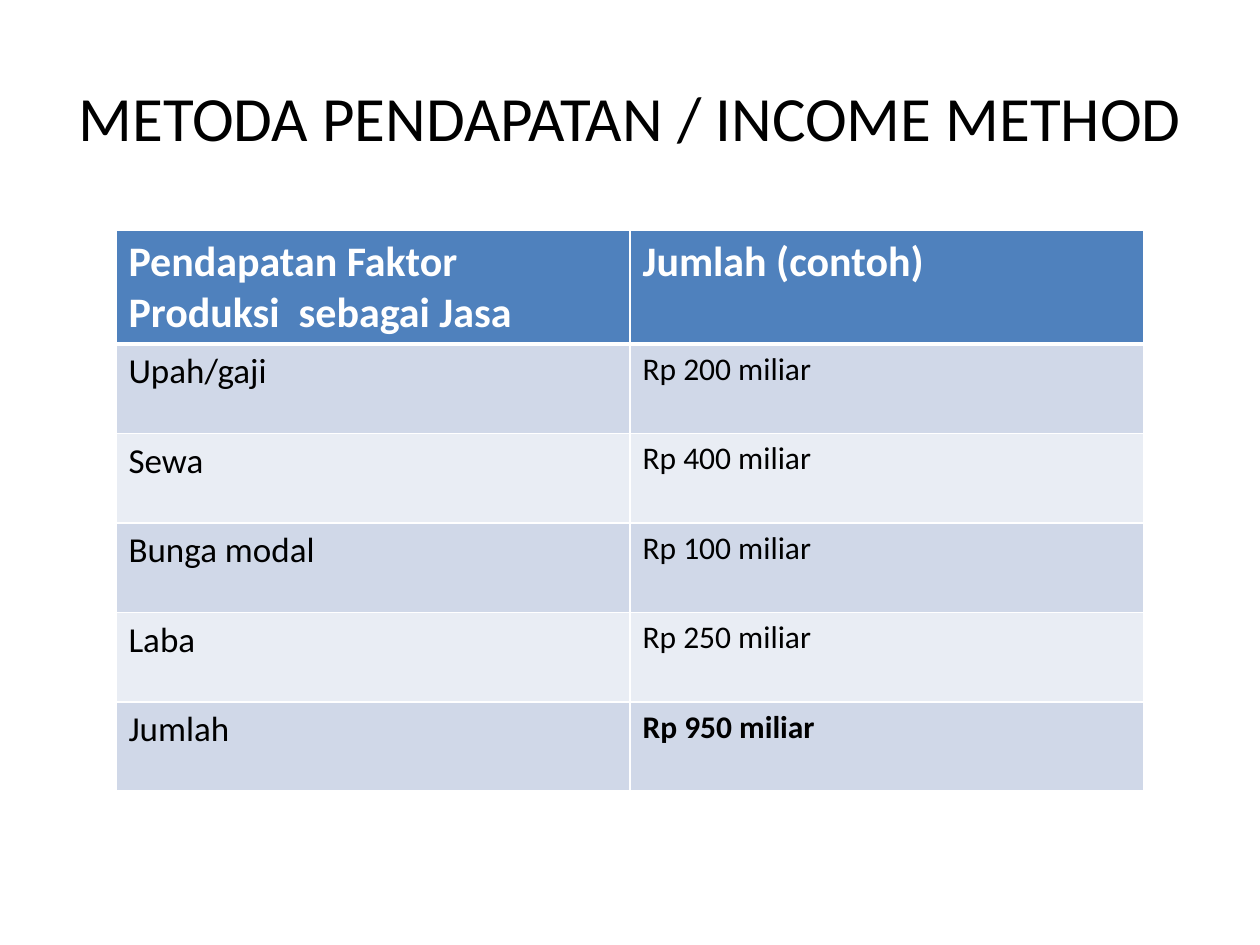
import pptx
import pptx.util
import pptx.dml.color
import pptx.enum.text
import pptx.oxml.ns
import lxml.etree

TITLE = "METODA PENDAPATAN / INCOME METHOD"
HEADER = ("Pendapatan Faktor Produksi  sebagai Jasa", "Jumlah (contoh)")
INCOMES = [
    ("Upah/gaji", "Rp 200 miliar"),
    ("Sewa", "Rp 400 miliar"),
    ("Bunga modal", "Rp 100 miliar"),
    ("Laba", "Rp 250 miliar"),
    ("Jumlah", "Rp 950 miliar"),
]
COLORS = {"text": "000000", "white": "FFFFFF", "header": "4F81BD",
          "odd": "D0D8E8", "even": "E9EDF4"}
FONT = "Calibri"
COL_W, HEADER_H, ROW_H = 4.08, 0.9, 0.71
Inches, Pt = pptx.util.Inches, pptx.util.Pt


def rgb(name):
    return pptx.dml.color.RGBColor.from_string(COLORS[name])


def add_run(p, text, size, color, bold=False):
    r = p.add_run()
    r.text = text
    r.font.name, r.font.size, r.font.bold = FONT, Pt(size), bold
    r.font.color.rgb = rgb(color)


def set_borders(cell, widths):
    qn = pptx.oxml.ns.qn
    tcPr = cell._tc.get_or_add_tcPr()
    for side, width in widths.items():
        ln = lxml.etree.SubElement(tcPr, qn("a:ln" + side), w=str(Pt(width)))
        fill = lxml.etree.SubElement(ln, qn("a:solidFill"))
        lxml.etree.SubElement(fill, qn("a:srgbClr"), val=COLORS["white"])


def add_title(slide):
    sp = slide.shapes.add_textbox(Inches(0.5), Inches(0.3), Inches(9), Inches(1.25))
    tf = sp.text_frame
    tf.word_wrap = True
    tf.margin_left = tf.margin_right = 0
    tf.vertical_anchor = pptx.enum.text.MSO_ANCHOR.MIDDLE
    p = tf.paragraphs[0]
    p.alignment = pptx.enum.text.PP_ALIGN.CENTER
    add_run(p, TITLE, 36, "text")


def add_income_table(slide):
    rows = [HEADER] + INCOMES
    height = HEADER_H + ROW_H * len(INCOMES)
    table = slide.shapes.add_table(len(rows), len(HEADER), Inches(0.92), Inches(1.83),
                                   Inches(COL_W * len(HEADER)), Inches(height)).table
    for col in table.columns:
        col.width = Inches(COL_W)
    for i, row in enumerate(rows):
        table.rows[i].height = Inches(ROW_H if i else HEADER_H)
        fill = ("odd" if i % 2 else "even") if i else "header"
        for j, text in enumerate(row):
            cell = table.cell(i, j)
            set_borders(cell, {"L": 1, "R": 1, "T": 3 if i == 1 else 1,
                               "B": 3 if i == 0 else 1})
            cell.fill.solid()
            cell.fill.fore_color.rgb = rgb(fill)
            p = cell.text_frame.paragraphs[0]
            if i == 0:
                add_run(p, text, 24, "white", True)
            else:
                is_total = i == len(INCOMES) and j == 1
                add_run(p, text, (20, 18)[j], "text", is_total)


def main():
    prs = pptx.Presentation()
    prs.slide_width, prs.slide_height = Inches(10), Inches(7.5)
    slide = prs.slides.add_slide(prs.slide_layouts[6])
    add_title(slide)
    add_income_table(slide)
    prs.save("out.pptx")


if __name__ == "__main__":
    main()
